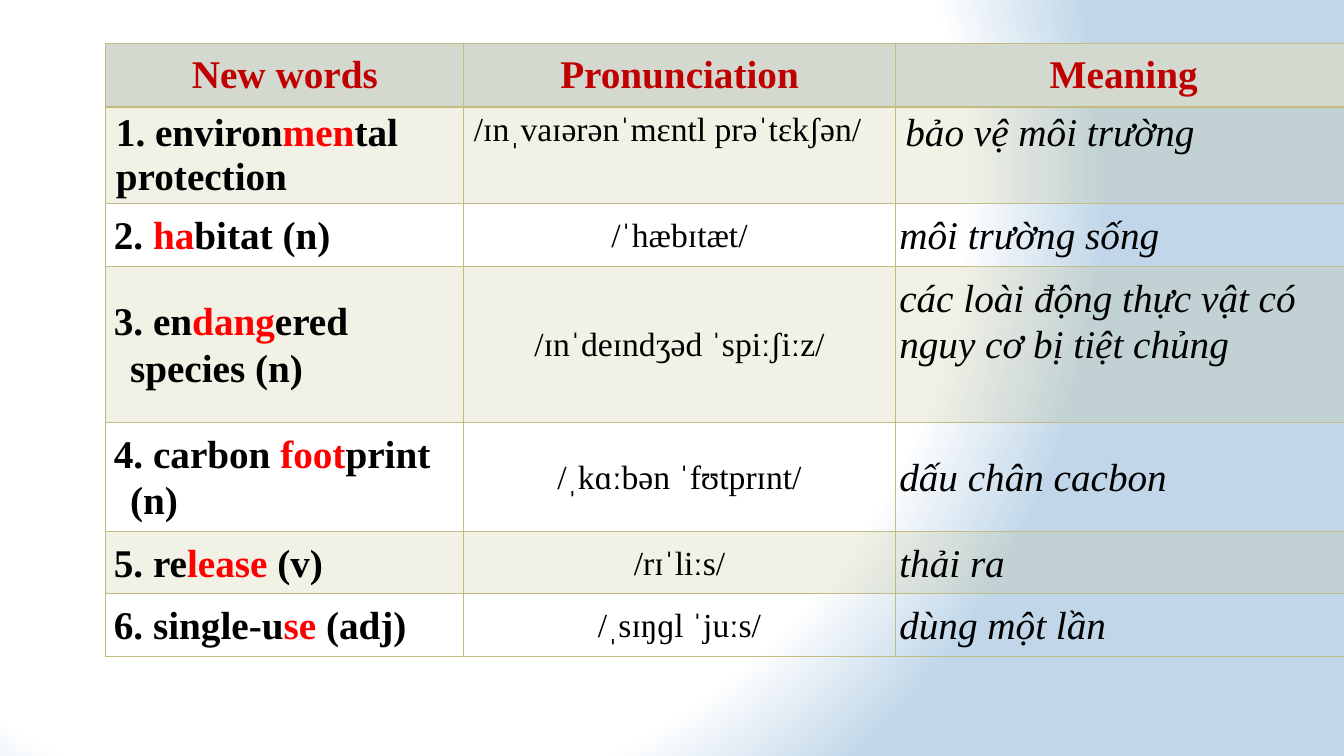
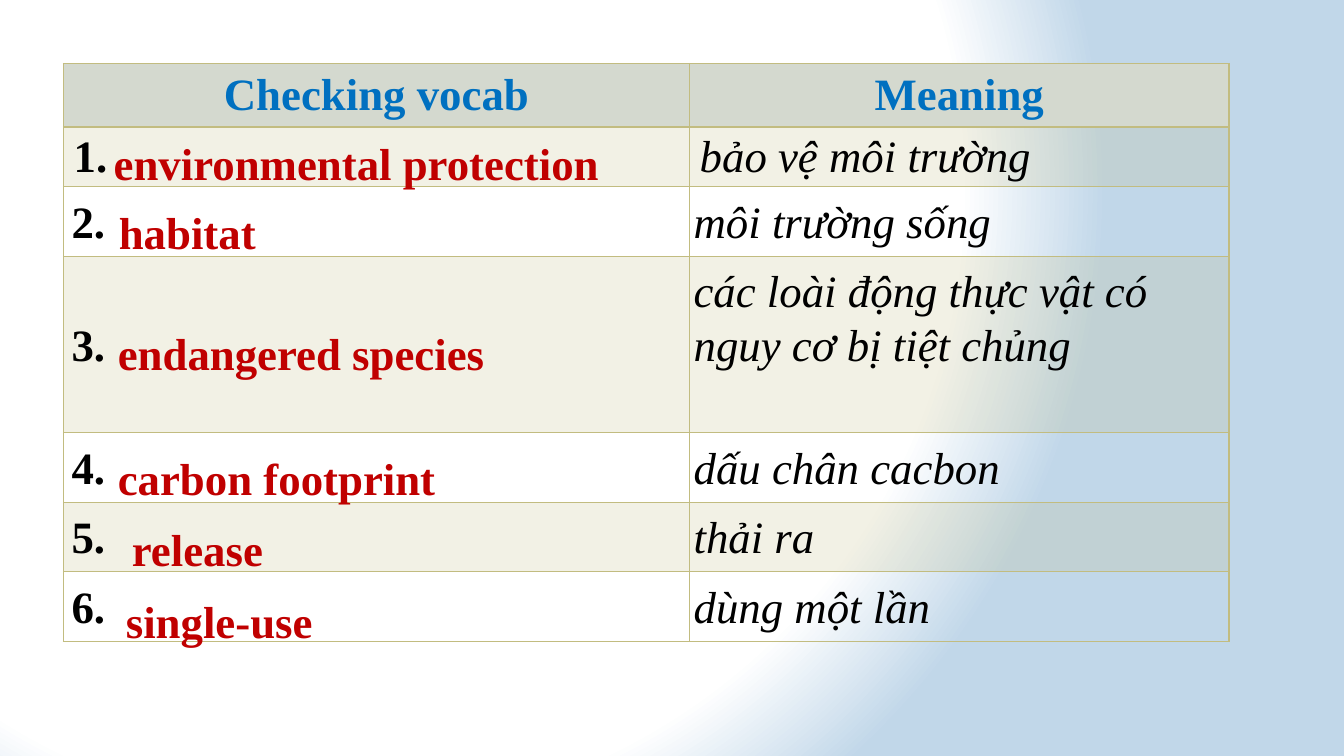
from dataclasses import dataclass

from lxml.etree import SubElement
from pptx import Presentation
from pptx.dml.color import RGBColor as RGB
from pptx.enum.text import MSO_ANCHOR as Anchor, MSO_AUTO_SIZE as Fit, PP_ALIGN as Align
from pptx.oxml import parse_xml
from pptx.oxml.ns import nsdecls, qn
from pptx.util import Inches, Pt


@dataclass(frozen=True)
class Theme:
    font: str = "Times New Roman"
    ink: str = "000000"
    white: str = "FFFFFF"
    sky: str = "C1D7E9"
    head: str = "D4D9CF"
    line: str = "C2BC80"
    stress: str = "FF0000"
    red: str = "C00000"
    blue: str = "0070C0"
    small: int = 24
    word: int = 28
    check: int = 32


T = Theme()

# (before, stressed, after), pronunciation, meaning
WORDS = [
    (("environ", "men", "tal protection"), "/ɪnˌvaɪərənˈmɛntl prəˈtɛkʃən/", "bảo vệ môi trường"),
    (("", "ha", "bitat (n)"), "/ˈhæbɪtæt/", "môi trường sống"),
    (("en", "dang", "ered species (n)"), "/ɪnˈdeɪndʒəd ˈspiːʃiːz/",
     "các loài động thực vật có nguy cơ bị tiệt chủng"),
    (("carbon ", "foot", "print (n)"), "/ˌkɑːbən ˈfʊtprɪnt/", "dấu chân cacbon"),
    (("re", "lease", " (v)"), "/rɪˈliːs/", "thải ra"),
    (("single-u", "se", " (adj)"), "/ˌsɪŋɡl ˈjuːs/", "dùng một lần"),
]
TALL = 3  # the row that keeps a spare line under its meaning

# answer, left, top, width
ANSWERS = [
    ("environmental protection", 1.03, 1.3, 5.06),
    ("habitat", 1.08, 1.98, 1.68),
    ("endangered species", 1.07, 3.18, 3.99),
    ("carbon footprint", 1.07, 4.42, 3.38),
    ("release", 1.21, 5.13, 1.52),
    ("single-use", 1.15, 5.84, 2.18),
]


def paint(master):
    """Give every slide the round white-to-blue background."""
    master.background.fill.solid()
    solid = master.element.find(".//" + qn("p:bgPr")).find(qn("a:solidFill"))
    stops = "".join(f'<a:gs pos="{pos}"><a:srgbClr val="{hue}"/></a:gs>'
                    for pos, hue in ((81000, T.white), (100000, T.sky)))
    grad = parse_xml(
        f'<a:gradFill {nsdecls("a")} rotWithShape="1"><a:gsLst>{stops}</a:gsLst>'
        '<a:path path="circle"><a:fillToRect l="50000" t="50000" r="100000" b="100000"/>'
        '</a:path></a:gradFill>')
    solid.getparent().replace(solid, grad)


def add_run(para, text, size, hue=T.ink, bold=False, italic=False):
    run = para.add_run()
    run.text = text
    font = run.font
    font.name, font.size = T.font, Pt(size)
    font.bold, font.italic = bold, italic
    font.color.rgb = RGB.from_string(hue)


def style_cell(cell, row):
    """Draw borders and fill: a header, then tinted odd rows."""
    props = cell._tc.get_or_add_tcPr()
    for side in "LRTB":
        if row == 1 and side == "T":
            continue  # the thick header line shows here
        width = Pt(2 if row == 0 and side == "B" else 1)
        props.append(parse_xml(
            f'<a:ln{side} {nsdecls("a")} w="{width}"><a:solidFill>'
            f'<a:srgbClr val="{T.line}"/></a:solidFill></a:ln{side}>'))
    if row and row % 2 == 0:
        cell.fill.background()
        return
    cell.fill.solid()
    cell.fill.fore_color.rgb = RGB.from_string(T.line if row else T.head)
    if row:
        tint = props.find(qn("a:solidFill")).find(qn("a:srgbClr"))
        SubElement(tint, qn("a:alpha")).set("val", "20000")


def set_pads(cell, side, low=0.08):
    cell.margin_left = cell.margin_right = Inches(side)
    cell.margin_top, cell.margin_bottom = Inches(0.08), Inches(low)


def add_grid(slide, place, cols, rows, heads, hue, size, body):
    """Add a vocabulary table; body holds rows of (kind, runs) cells."""
    left, top = place
    table = slide.shapes.add_table(len(rows), len(cols), Inches(left), Inches(top),
                                   Inches(sum(cols)), Inches(sum(rows))).table
    table.first_row = table.horz_banding = False
    for col, width in zip(table.columns, cols):
        col.width = Inches(width)
    for row, height in zip(table.rows, rows):
        row.height = Inches(height)

    for c, text in enumerate(heads):
        cell = table.cell(0, c)
        style_cell(cell, 0)
        cell.vertical_anchor = Anchor.MIDDLE
        para = cell.text_frame.paragraphs[0]
        para.alignment = Align.CENTER
        add_run(para, text, size, hue, bold=True)

    for r, cells in enumerate(body, 1):
        for c, (kind, runs) in enumerate(cells):
            cell = table.cell(r, c)
            style_cell(cell, r)
            para = cell.text_frame.paragraphs[0]
            if r > 1:
                cell.vertical_anchor = Anchor.MIDDLE
                para.line_spacing = 1.07
                spare = size / 60 if kind == "mean" and r == TALL else 0
                set_pads(cell, 0.08 if kind == "word" else 0.04, 0.08 + spare)
                if kind == "word":
                    props = para._p.get_or_add_pPr()
                    props.set("marL", str(Inches(0.16)))
                    props.set("indent", str(-Inches(0.16)))
                elif kind == "sound":
                    para.alignment = Align.CENTER
            for text, tone in runs:
                add_run(para, text, T.small if kind == "sound" else size, tone,
                        bold=kind == "word", italic=kind == "mean")


def add_words(slide):
    body = [
        [("word", [(f"{n}. {pre}", T.ink), (mid, T.stress), (post, T.ink)]),
         ("sound", [(sound, T.ink)]),
         ("mean", [(mean, T.ink)])]
        for n, ((pre, mid, post), sound, mean) in enumerate(WORDS, 1)]
    add_grid(slide, (1.05, 0.43), (3.55, 4.28, 4.53),
             (0.63, 0.96, 0.62, 1.54, 1.08, 0.62, 0.62),
             ("New words", "Pronunciation", "Meaning"), T.red, T.word, body)


def add_check(slide):
    body = [[("word", [(f"{n}.", T.ink)]), ("mean", [(mean, T.ink)])]
            for n, (_, _, mean) in enumerate(WORDS, 1)]
    add_grid(slide, (0.63, 0.63), (6.21, 5.35),
             (0.63, 0.59, 0.69, 1.74, 0.69, 0.69, 0.69),
             ("Checking vocab", "Meaning"), T.blue, T.check, body)
    for text, left, top, width in ANSWERS:
        frame = slide.shapes.add_textbox(Inches(left), Inches(top),
                                         Inches(width), Inches(0.64)).text_frame
        frame.word_wrap = False
        frame.auto_size = Fit.SHAPE_TO_FIT_TEXT
        add_run(frame.paragraphs[0], text, T.check, T.red, bold=True)


def main():
    deck = Presentation()
    deck.slide_width, deck.slide_height = Inches(13.33), Inches(7.5)
    paint(deck.slide_master)
    for build in (add_words, add_check):
        build(deck.slides.add_slide(deck.slide_layouts[6]))
    deck.save("out.pptx")


if __name__ == "__main__":
    main()
